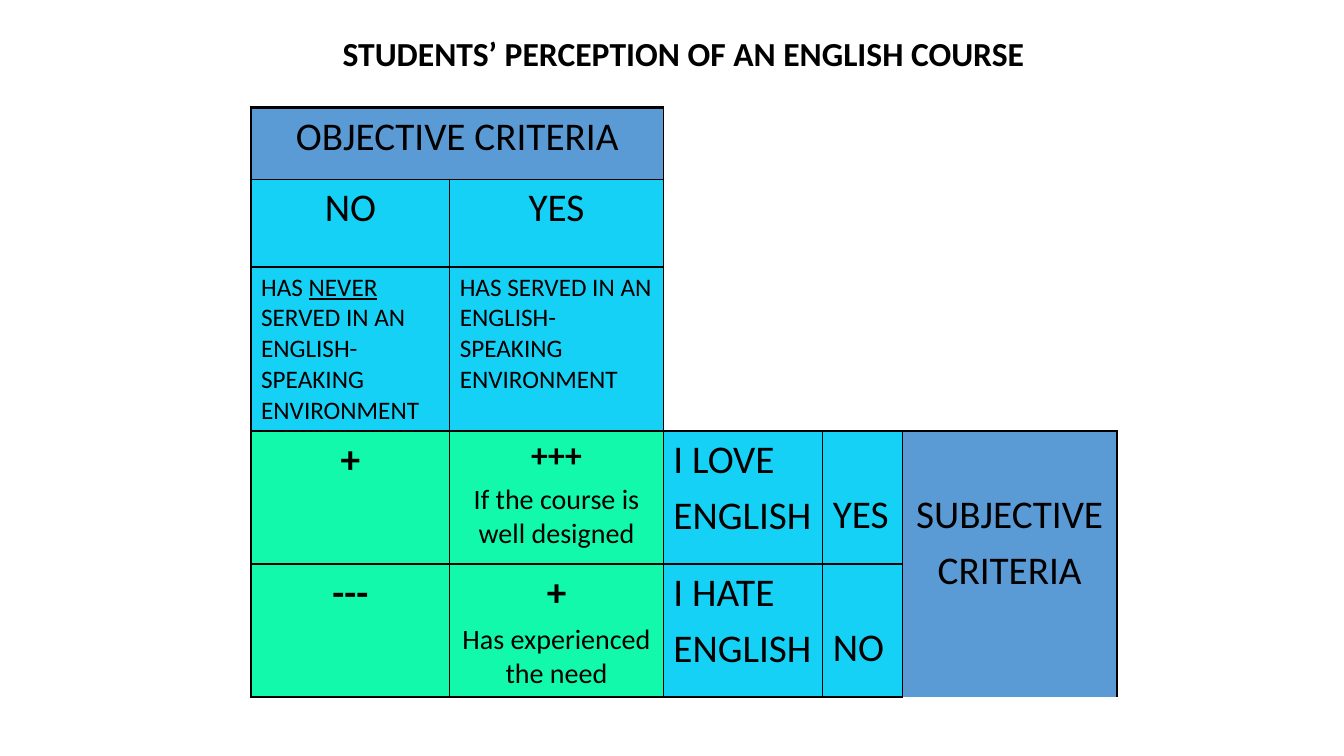
import pptx
import pptx.dml.color
import pptx.enum.text
import pptx.oxml
import pptx.oxml.ns
import pptx.util
from dataclasses import dataclass

Inches = pptx.util.Inches
Pt = pptx.util.Pt
RGB = pptx.dml.color.RGBColor.from_string
LEFT = pptx.enum.text.PP_ALIGN.LEFT
CENTER = pptx.enum.text.PP_ALIGN.CENTER


@dataclass
class Theme:
    font: str = "Calibri"
    ink: str = "000000"
    heading: str = "5B9BD5"
    option: str = "16D1F6"
    outcome: str = "13F9AC"
    large: int = 28
    title: int = 24
    detail: int = 20
    small: int = 18
    thin: float = 1
    thick: float = 2.25


class SlideBuilder:
    def __init__(self, slide, theme):
        self.slide, self.theme = slide, theme

    def paragraph(self, p, text, size, align, bold=False, underline=None):
        """Fill a paragraph; the word named by underline gets a line below it."""
        p.alignment = align
        p.space_before = Pt(0.2 * size)
        before, word, after = text.partition(underline) if underline else (text, "", "")
        for part in filter(None, (before, word, after)):
            r = p.add_run()
            r.text = part
            r.font.name = self.theme.font
            r.font.size = Pt(size)
            r.font.bold = bold
            r.font.underline = part == underline
            r.font.color.rgb = RGB(self.theme.ink)

    def title(self, text, left, top, width, height):
        sp = self.slide.shapes.add_textbox(*map(Inches, (left, top, width, height)))
        tf = sp.text_frame
        tf.word_wrap = True
        self.paragraph(tf.paragraphs[0], text, self.theme.title, CENTER, bold=True)

    def table(self, left, top, widths, heights):
        sp = self.slide.shapes.add_table(
            len(heights), len(widths), Inches(left), Inches(top),
            Inches(sum(widths)), Inches(sum(heights)))
        table = sp.table
        table.first_row = table.horz_banding = False
        for column, width in zip(table.columns, widths):
            column.width = Inches(width)
        for row, height in zip(table.rows, heights):
            row.height = Inches(height)
        return table

    def borders(self, cell, widths):
        tcPr = cell._tc.get_or_add_tcPr()
        for side in "LRTB":
            width = widths.get(side, 0)
            fill = (f'<a:solidFill><a:srgbClr val="{self.theme.ink}"/></a:solidFill>'
                    if width else "<a:noFill/>")
            tcPr.append(pptx.oxml.parse_xml(
                f'<a:ln{side} {pptx.oxml.ns.nsdecls("a")} w="{int(Pt(width))}">{fill}</a:ln{side}>'))

    def block(self, table, row, col, lines=(), fill=None, align=LEFT,
              rows=1, cols=1, widths=None, drop=0.05):
        """One cell or merged area; drop is the inset above its text."""
        widths = widths or {}
        for r in range(row, row + rows):
            for c in range(col, col + cols):
                edges = {"L": c == col, "R": c == col + cols - 1,
                         "T": r == row, "B": r == row + rows - 1}
                cell = table.cell(r, c)
                self.borders(cell, {s: widths.get(s, 0) for s in edges if edges[s]})
                if fill:
                    cell.fill.solid()
                    cell.fill.fore_color.rgb = RGB(fill)
                else:
                    cell.fill.background()
        cell = table.cell(row, col)
        if rows * cols > 1:
            cell.merge(table.cell(row + rows - 1, col + cols - 1))
        cell.margin_top = Inches(drop)
        tf = cell.text_frame
        for i, line in enumerate(lines):
            p = tf.add_paragraph() if i else tf.paragraphs[0]
            self.paragraph(p, line[0], line[1], align, *line[2:])


def main():
    prs = pptx.Presentation()
    prs.slide_width, prs.slide_height = Inches(13.33), Inches(7.5)
    th = Theme()
    b = SlideBuilder(prs.slides.add_slide(prs.slide_layouts[6]), th)

    # Criteria table
    table = b.table(2.49, 1.07, [1.97, 2.12, 1.58, 0.79, 2.13],
                    [0.71, 0.87, 1.6, 1.32, 1.32])
    thin = dict.fromkeys("LRTB", th.thin)
    second_line = 0.6

    # Headings and the open corner
    b.block(table, 0, 0, [("OBJECTIVE CRITERIA", th.large)], th.heading, CENTER,
            cols=2, widths={**thin, "L": th.thick, "T": th.thick})
    b.block(table, 0, 2, rows=3, cols=3, widths={"L": th.thin, "B": th.thin})
    b.block(table, 3, 4, [("SUBJECTIVE", th.large), ("CRITERIA", th.large)],
            th.heading, CENTER, rows=2, drop=second_line,
            widths={**thin, "R": th.thick, "B": th.thick})

    # Objective columns: answer, meaning, and outcome for each attitude
    objective = [
        ("NO", ("HAS NEVER SERVED IN AN ENGLISH-SPEAKING ENVIRONMENT",
                th.small, False, "NEVER"),
         [("+", th.large, True)], [("---", th.large, True)]),
        ("YES", ("HAS SERVED IN AN ENGLISH-SPEAKING ENVIRONMENT", th.small),
         [("+++", th.title, True), ("If the course is well designed", th.detail)],
         [("+", th.large, True), ("Has experienced the need", th.detail)]),
    ]
    for col, (answer, meaning, love, hate) in enumerate(objective):
        widths = {**thin, "L": th.thin if col else th.thick}
        b.block(table, 1, col, [(answer, th.large)], th.option, CENTER, widths=widths)
        b.block(table, 2, col, [meaning], th.option, widths=widths)
        b.block(table, 3, col, love, th.outcome, CENTER, widths=widths)
        b.block(table, 4, col, hate, th.outcome, CENTER,
                widths={**widths, "B": th.thick})

    # Subjective rows
    for row, feeling, answer in ((3, "I LOVE", "YES"), (4, "I HATE", "NO")):
        widths = {**thin, "B": th.thick if row == 4 else th.thin}
        b.block(table, row, 2, [(feeling, th.large), ("ENGLISH", th.large)],
                th.option, widths=widths)
        b.block(table, row, 3, [(answer, th.large)], th.option,
                widths=widths, drop=second_line)

    # Title
    b.title("STUDENTS’ PERCEPTION OF AN ENGLISH COURSE", 2.41, 0.28, 8.74, 0.5)

    prs.save("out.pptx")


if __name__ == "__main__":
    main()
